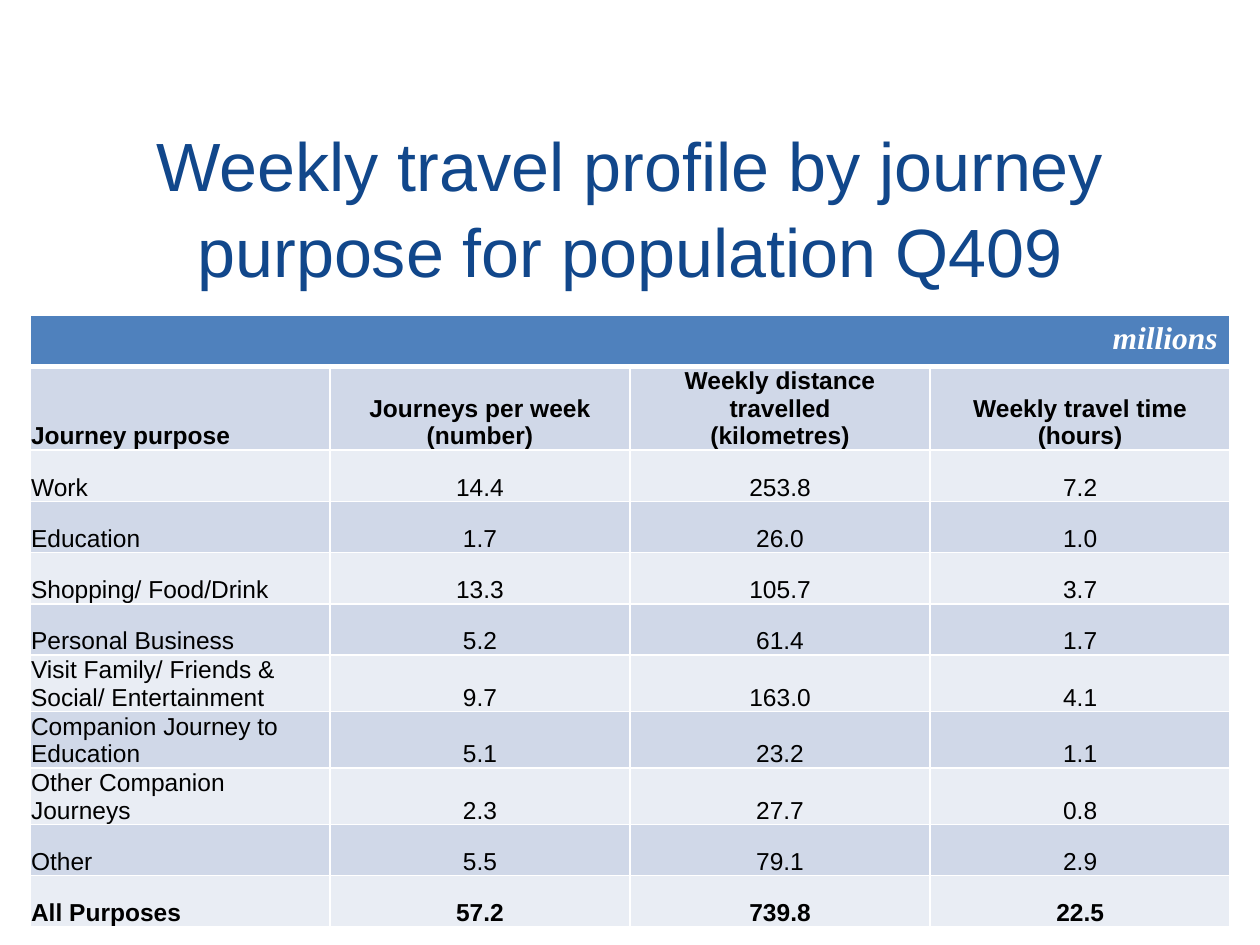
from lxml.etree import SubElement
from pptx import Presentation
from pptx.dml.color import RGBColor
from pptx.enum.text import MSO_ANCHOR, MSO_AUTO_SIZE, PP_ALIGN
from pptx.oxml.ns import qn
from pptx.util import Pt

COLORS = {"title": "11478B", "header": "4F81BD", "dark": "D0D8E8",
          "light": "E9EDF4", "text": "000000", "white": "FFFFFF"}
ROWS = [
    ["Journey purpose", "Journeys per week (number)",
     "Weekly distance travelled\n(kilometres)", "Weekly travel time (hours)"],
    ["Work", "14.4", "253.8", "7.2"],
    ["Education", "1.7", "26.0", "1.0"],
    ["Shopping/ Food/Drink", "13.3", "105.7", "3.7"],
    ["Personal Business", "5.2", "61.4", "1.7"],
    ["Visit Family/ Friends & Social/ Entertainment", "9.7", "163.0", "4.1"],
    ["Companion Journey to Education", "5.1", "23.2", "1.1"],
    ["Other Companion Journeys", "2.3", "27.7", "0.8"],
    ["Other", "5.5", "79.1", "2.9"],
    ["All Purposes", "57.2", "739.8", "22.5"],
]


def add_run(p, text, size, color, font="Arial", bold=False, italic=False):
    r = p.add_run()
    r.text = text
    r.font.name, r.font.size = font, Pt(size)
    r.font.bold, r.font.italic = bold, italic
    r.font.color.rgb = RGBColor.from_string(COLORS[color])


def style_cell(cell, fill, top=1, bottom=1):
    """Give the cell white borders (widths in points) and a solid fill."""
    tc_pr = cell._tc.get_or_add_tcPr()
    for side, width in (("L", 1), ("R", 1), ("T", top), ("B", bottom)):
        ln = SubElement(tc_pr, qn(f"a:ln{side}"), w=str(Pt(width)))
        solid = SubElement(ln, qn("a:solidFill"))
        SubElement(solid, qn("a:srgbClr"), val=COLORS["white"])
    cell.fill.solid()
    cell.fill.fore_color.rgb = RGBColor.from_string(COLORS[fill])


prs = Presentation()
prs.slide_width, prs.slide_height = Pt(720), Pt(540)
s = prs.slides.add_slide(prs.slide_layouts[5])

# Title
title = s.shapes.title
title.left, title.top, title.width, title.height = Pt(17), Pt(71.5), Pt(686), Pt(91)
tf = title.text_frame
tf.word_wrap = True
tf.auto_size = MSO_AUTO_SIZE.NONE
tf.vertical_anchor = MSO_ANCHOR.MIDDLE
p = tf.paragraphs[0]
p.alignment = PP_ALIGN.CENTER
p.line_spacing = 1.05
add_run(p, "Weekly travel profile by journey purpose for population Q409", 39, "title")

# Table
table = s.shapes.add_table(len(ROWS) + 1, 4, Pt(17), Pt(180), Pt(686), Pt(322.3)).table
for column in table.columns:
    column.width = Pt(171.5)
for row in table.rows:
    row.height = Pt(29.3)

# Unit header across all columns
for cell in table.rows[0].cells:
    style_cell(cell, "header", bottom=3)
unit = table.cell(0, 0)
unit.merge(table.cell(0, 3))
p = unit.text_frame.paragraphs[0]
p.alignment = PP_ALIGN.RIGHT
add_run(p, "millions", 18, "white", "Times New Roman", bold=True, italic=True)

# Column labels, purposes and totals
for i, values in enumerate(ROWS, start=1):
    for j, value in enumerate(values):
        cell = table.cell(i, j)
        style_cell(cell, "dark" if i % 2 else "light", top=3 if i == 1 else 1)
        cell.vertical_anchor = MSO_ANCHOR.BOTTOM
        cell.margin_left = cell.margin_right = cell.margin_top = Pt(0.75)
        cell.margin_bottom = Pt(0)
        tf = cell.text_frame
        for n, line in enumerate(value.split("\n")):
            p = tf.add_paragraph() if n else tf.paragraphs[0]
            p.alignment = PP_ALIGN.CENTER if j else PP_ALIGN.LEFT
            add_run(p, line, 14, "text", bold=i in (1, len(ROWS)))

prs.save("out.pptx")
